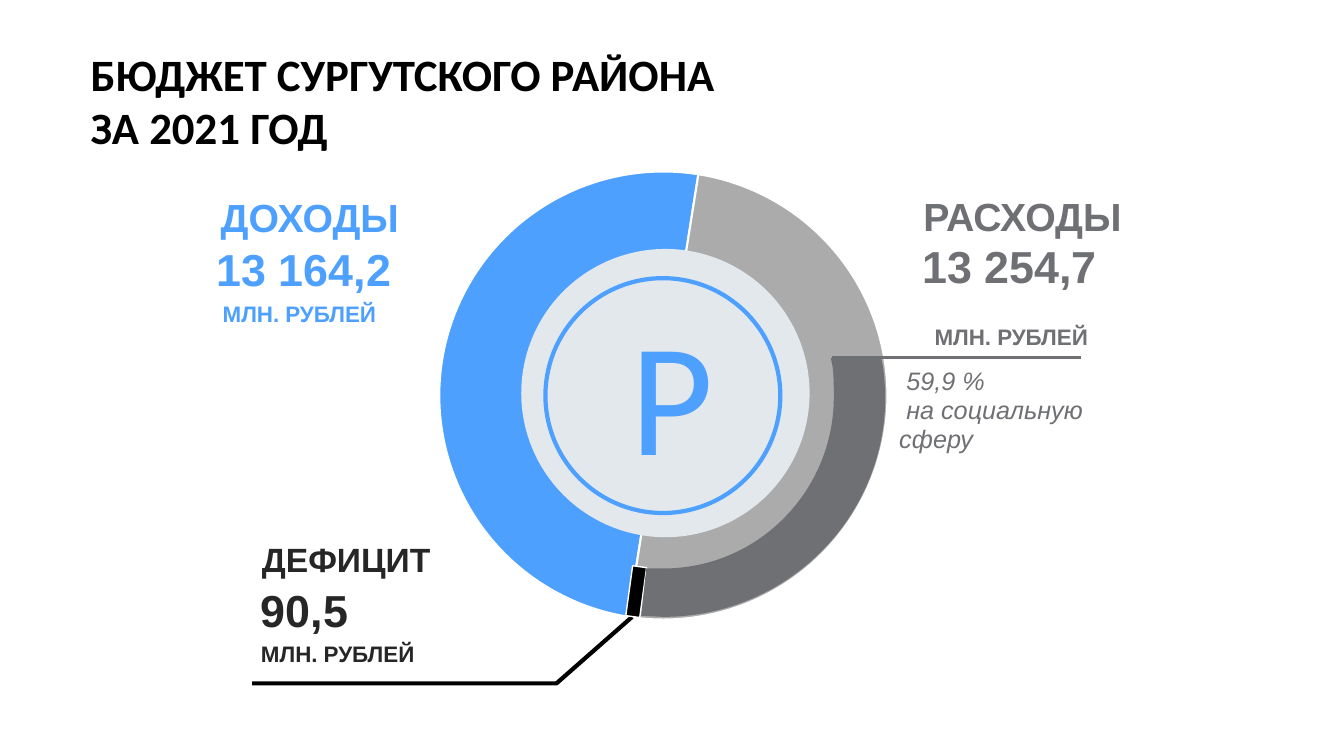
from lxml import etree
from pptx import Presentation
from pptx import util as u
from pptx.chart.data import CategoryChartData
from pptx.dml.color import RGBColor
from pptx.enum import chart as charts, shapes, text
from pptx.oxml import parse_xml
from pptx.oxml.ns import nsdecls, qn

PX = 9144  # EMU per px, 100 px to the inch
COLORS = {
    "income": "4EA0FF", "spending": "ABABAB", "social": "6F7074",
    "deficit": "000000", "dark": "262626", "disc": "E2E8EC", "white": "FFFFFF",
}


def px(*lengths):
    return [u.Emu(length * PX) for length in lengths]


def rgb(name):
    return RGBColor.from_string(COLORS[name])


class BudgetSlide:
    def __init__(self, slide, font="Arial"):
        self.slide, self.shapes, self.font = slide, slide.shapes, font

    def paint(self, shape, fill=None, line=None, weight=1):
        shape.shadow.inherit = False
        if fill:
            shape.fill.solid()
            shape.fill.fore_color.rgb = rgb(fill)
        else:
            shape.fill.background()
        if line:
            shape.line.color.rgb = rgb(line)
            shape.line.width = u.Pt(weight)
        else:
            shape.line.fill.background()
        return shape

    def format(self, paragraph, size, color, bold=True, italic=False, font=None):
        for run in paragraph.runs:
            run.font.name = font or self.font
            run.font.size = u.Pt(size)
            run.font.bold, run.font.italic = bold, italic
            run.font.color.rgb = rgb(color)

    def title(self, box, wording):
        title = self.shapes.title
        title.left, title.top, title.width, title.height = px(*box)
        frame = title.text_frame
        frame.text = wording
        frame.word_wrap = False
        frame.auto_size = text.MSO_AUTO_SIZE.NONE
        frame.vertical_anchor = text.MSO_ANCHOR.TOP
        for paragraph in frame.paragraphs:
            paragraph.alignment = text.PP_ALIGN.LEFT
            paragraph.line_spacing = 1.0
            self.format(paragraph, 32, "deficit", font="Calibri")

    def label(self, box, lines, color, pitch=None, **style):
        """Each line is (wording, size, indent in px, points before)."""
        frame = self.shapes.add_textbox(*px(*box)).text_frame
        frame.word_wrap = True
        frame.text = "\n".join(line[0] for line in lines)
        for paragraph, (_, size, indent, before) in zip(frame.paragraphs, lines):
            if pitch:
                paragraph.line_spacing = u.Pt(pitch)
            paragraph.space_before = u.Pt(before)
            paragraph._p.get_or_add_pPr().set("marL", str(indent * PX))
            self.format(paragraph, size, color, **style)

    def shape(self, kind, box, **paint):
        return self.paint(self.shapes.add_shape(kind, *px(*box)), **paint)

    def outline(self, start, steps, close, **paint):
        """A step of one point is a line, a step of three is a Bézier curve."""
        builder = self.shapes.build_freeform(*start, scale=PX)
        builder.add_line_segments([point for step in steps for point in step], close=close)
        shape = builder.convert_to_shape()
        segments = iter(shape._element.xpath(".//a:lnTo"))
        for step in steps:
            first, *others = [next(segments) for _ in step]
            if others:
                first.tag = qn("a:cubicBezTo")
                for segment in others:
                    first.append(segment[0])
                    segment.getparent().remove(segment)
        return self.paint(shape, **paint)

    def rule(self, start, end, color, weight):
        rule = self.shapes.add_connector(
            shapes.MSO_CONNECTOR.STRAIGHT, *px(*start, *end))
        rule.line.color.rgb = rgb(color)
        rule.line.width = u.Pt(weight)
        etree.SubElement(rule._element.spPr, qn("a:effectLst"))

    def ring(self, box, shares, start, hole, layout):
        """Shares map a colour name to a value."""
        data = CategoryChartData()
        data.categories = [str(n + 1) for n in range(len(shares))]
        data.add_series("Series 1", shares.values())
        chart = self.shapes.add_chart(
            charts.XL_CHART_TYPE.DOUGHNUT, *px(*box), data).chart
        chart.has_title = chart.has_legend = False
        chart.font.name, chart.font.size = "Calibri", u.Pt(10)
        chart.font.color.rgb = rgb("deficit")
        plot = chart.plots[0]
        plot.vary_by_categories = True
        for n, color in enumerate(shares):
            part = plot.series[0].points[n].format
            part.fill.solid()
            part.fill.fore_color.rgb = rgb(color)
            part.line.color.rgb = rgb("white")
            part.line.width = u.Pt(1.5)
        for tag, value in (("firstSliceAng", start), ("holeSize", hole)):
            chart._chartSpace.xpath(f".//c:{tag}")[0].set("val", str(value))
        # Fixed plot area, as fractions of the chart frame
        area = chart._chartSpace.xpath(".//c:plotArea")[0]
        for old in area.findall(qn("c:layout")):
            area.remove(old)
        modes = '<c:layoutTarget val="inner"/><c:xMode val="edge"/><c:yMode val="edge"/>'
        sizes = "".join(f'<c:{k} val="{v}"/>' for k, v in zip("xywh", layout))
        area.insert(0, parse_xml(
            f'<c:layout {nsdecls("c")}><c:manualLayout>{modes}{sizes}'
            "</c:manualLayout></c:layout>"))


def main():
    deck = Presentation()
    deck.slide_width, deck.slide_height = px(1333, 750)
    budget = BudgetSlide(deck.slides.add_slide(deck.slide_layouts[5]))
    oval = shapes.MSO_SHAPE.OVAL
    unit = "МЛН. РУБЛЕЙ"

    budget.title((80, 41, 645, 172), "БЮДЖЕТ СУРГУТСКОГО РАЙОНА\nЗА 2021 ГОД")

    # Budget ring with the rouble sign in its centre
    budget.ring((303, 156, 710, 473), {"income": 50, "spending": 50, "deficit": 0},
                start=189, hole=77, layout=(0.18, 0.03, 0.64, 0.94))
    budget.shape(oval, (517, 247, 286, 286), fill="disc")
    budget.shape(oval, (541, 276, 233, 233), line="income", weight=3)
    budget.label((615, 287, 129, 204), [("Р", 115, 0, 0)], "income",
                 bold=False, font="Calibri")

    # Income
    budget.label((209, 187, 241, 57), [("ДОХОДЫ", 28, 0, 0)], "income")
    budget.label((205, 258, 261, 72), [("13 164,2", 32, 0, 0), (unit, 16, 6, 0)],
                 "income", pitch=22)

    # Spending
    budget.label((906, 186, 262, 57), [("РАСХОДЫ", 28, 0, 0)], "social")
    budget.label((893, 255, 229, 72), [("13 254,7", 32, 12, 0), (unit, 16, 24, 19)],
                 "social", pitch=22)

    # Deficit with its callout line
    budget.outline((627, 612), [[(552, 678)], [(250, 678)]], False,
                   line="deficit", weight=3)
    budget.label((250, 530, 243, 50), [("ДЕФИЦИТ", 24, 0, 0)], "dark")
    budget.label((249, 596, 239, 72), [("90,5", 32, 0, 0), (unit, 16, 0, 0)],
                 "dark", pitch=22)
    marker = budget.shape(shapes.MSO_SHAPE.RECTANGLE, (624, 562, 14, 50),
                          fill="deficit", line="white")
    marker.rotation = 7.8

    # Social share of the spending
    outer_edge = [[(874, 355)], [(876, 365)],
                  [(877, 375), (878, 384), (878, 394)],
                  [(878, 515), (779, 612), (658, 612)], [(636, 611)]]
    inner_edge = [[(641, 564)], [(658, 564)],
                  [(752, 564), (827, 487), (827, 394)],
                  [(827, 384), (827, 375), (826, 365)]]
    budget.outline((824, 355), outer_edge + inner_edge, True, fill="social")
    budget.label((882, 358, 395, 98),
                 [("59,9 %", 18, 7, 0), ("на социальную", 18, 7, 0), ("сферу", 18, 0, 0)],
                 "social", pitch=21, bold=False, italic=True)
    budget.rule((825, 355), (1072, 355), "social", 2.25)

    deck.save("out.pptx")


if __name__ == "__main__":
    main()
